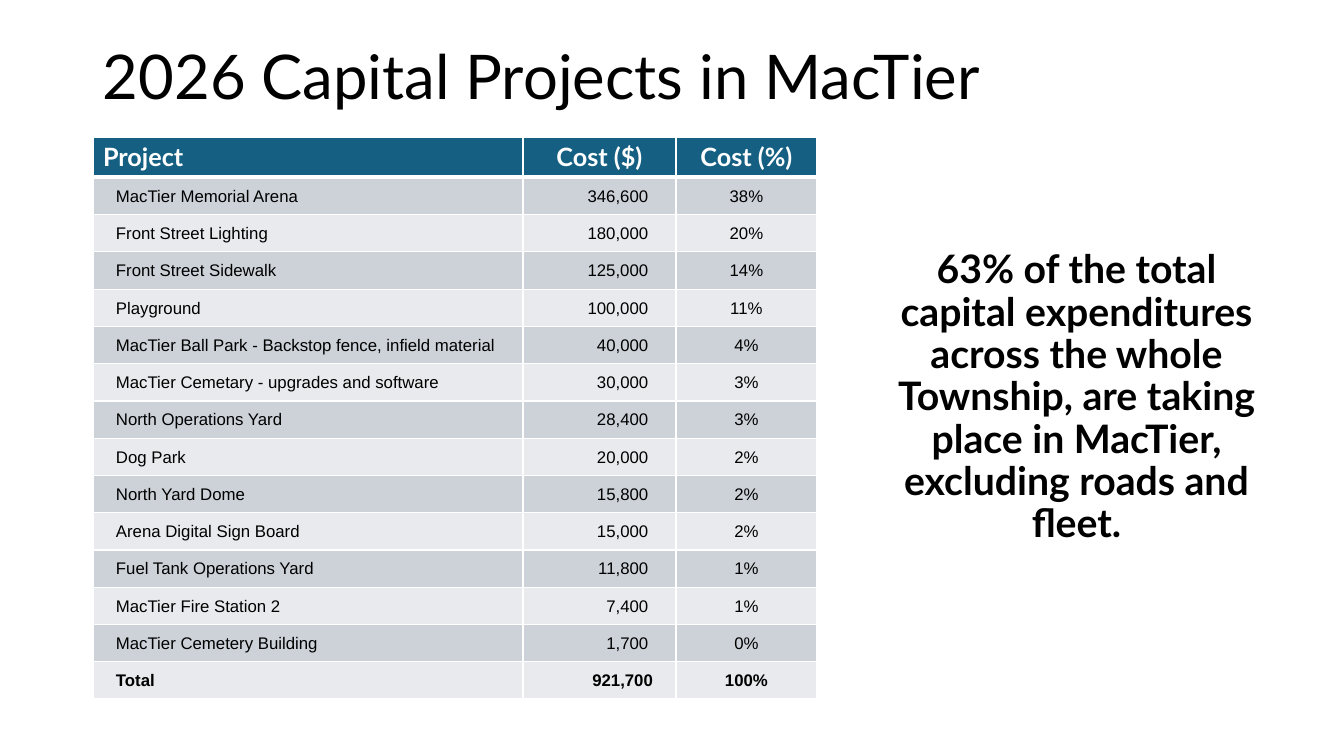
from pptx import Presentation
from pptx.dml.color import RGBColor as Rgb
from pptx.enum.text import MSO_ANCHOR as Anchor, PP_ALIGN as Align
from pptx.oxml import parse_xml
from pptx.oxml.ns import nsdecls
from pptx.util import Pt

TITLE = "2026 Capital Projects in MacTier"
NOTE = ("63% of the total capital expenditures across the whole Township, "
        "are taking place in MacTier, excluding roads and fleet.")
HEAD = ("Project", "Cost ($)", "Cost (%)")
ROWS = [
    ("MacTier Memorial Arena", "346,600 ", "38%"),
    ("Front Street Lighting", "180,000 ", "20%"),
    ("Front Street Sidewalk", "125,000 ", "14%"),
    ("Playground", "100,000 ", "11%"),
    ("MacTier Ball Park - Backstop fence, infield material", "40,000 ", "4%"),
    ("MacTier Cemetary - upgrades and software", "30,000 ", "3%"),
    ("North Operations Yard", "28,400 ", "3%"),
    ("Dog Park", "20,000 ", "2%"),
    ("North Yard Dome", "15,800 ", "2%"),
    ("Arena Digital Sign Board", "15,000 ", "2%"),
    ("Fuel Tank Operations Yard", "11,800 ", "1%"),
    ("MacTier Fire Station 2", "7,400 ", "1%"),
    ("MacTier Cemetery Building", "1,700 ", "0%"),
    ("Total", "921,700", "100%"),
]
COLS = (430, 153, 141)
LEFT, TOP, HIGH, HEAD_HIGH = 93, 137, 562, 40
BLACK, WHITE, BLUE = "000000", "FFFFFF", "156082"
BANDS = ("E8EAED", "CCD2D8")
SIDES = (Align.LEFT, Align.RIGHT, Align.CENTER)
PADS = ((23, 1), (1, 23), (1, 1))
SCALE = 914400 / 100.8


def px(n):
    return round(n * SCALE)


def color(code):
    return Rgb.from_string(code)


def style(par, size, face, code, bold, side):
    par.alignment = side
    for run in par.runs:
        font = run.font
        font.size, font.name, font.bold = Pt(size), face, bold
        font.color.rgb = color(code)


def label(slide, box, text, size, bold, side, anchor):
    frame = slide.shapes.add_textbox(*map(px, box)).text_frame
    frame.word_wrap = True
    frame.vertical_anchor = anchor
    frame.text = text
    par = frame.paragraphs[0]
    par.line_spacing = 0.9
    style(par, size, "Lato", BLACK, bold, side)


def border(cell, row):
    props = cell._tc.get_or_add_tcPr()
    for edge in "LRTB":
        thick = (row, edge) in ((0, "B"), (1, "T"))
        props.append(parse_xml(
            f'<a:ln{edge} {nsdecls("a")} w="{Pt(3 if thick else 1)}">'
            f'<a:solidFill><a:srgbClr val="{WHITE}"/></a:solidFill></a:ln{edge}>'))


def grid(slide):
    data = [HEAD] + ROWS
    table = slide.shapes.add_table(
        len(data), len(COLS), px(LEFT), px(TOP), px(sum(COLS)), px(HIGH)).table
    table.horz_banding = False
    for col, wide in zip(table.columns, COLS):
        col.width = px(wide)
    for i, texts in enumerate(data):
        table.rows[i].height = px((HIGH - HEAD_HIGH) / len(ROWS) if i else HEAD_HIGH)
        for j, text in enumerate(texts):
            cell = table.cell(i, j)
            border(cell, i)
            cell.fill.solid()
            cell.fill.fore_color.rgb = color(BANDS[i % 2] if i else BLUE)
            cell.text_frame.text = text
            par = cell.text_frame.paragraphs[0]
            if i:
                cell.vertical_anchor = Anchor.MIDDLE
                cell.margin_left, cell.margin_right = map(px, PADS[j])
                cell.margin_top, cell.margin_bottom = px(1), 0
                style(par, 12, "Arial", BLACK, i == len(ROWS), SIDES[j])
            else:
                style(par, 18, "Lato", WHITE, True, Align.CENTER if j else Align.LEFT)


def main():
    deck = Presentation()
    deck.slide_width, deck.slide_height = px(1344), px(756)
    slide = deck.slides.add_slide(deck.slide_layouts[6])
    label(slide, (93, 7, 1159, 146), TITLE, 44, False, Align.LEFT, Anchor.MIDDLE)
    grid(slide)
    label(slide, (867, 245, 419, 309), NOTE, 28, True, Align.CENTER, Anchor.TOP)
    deck.save("out.pptx")


if __name__ == "__main__":
    main()
